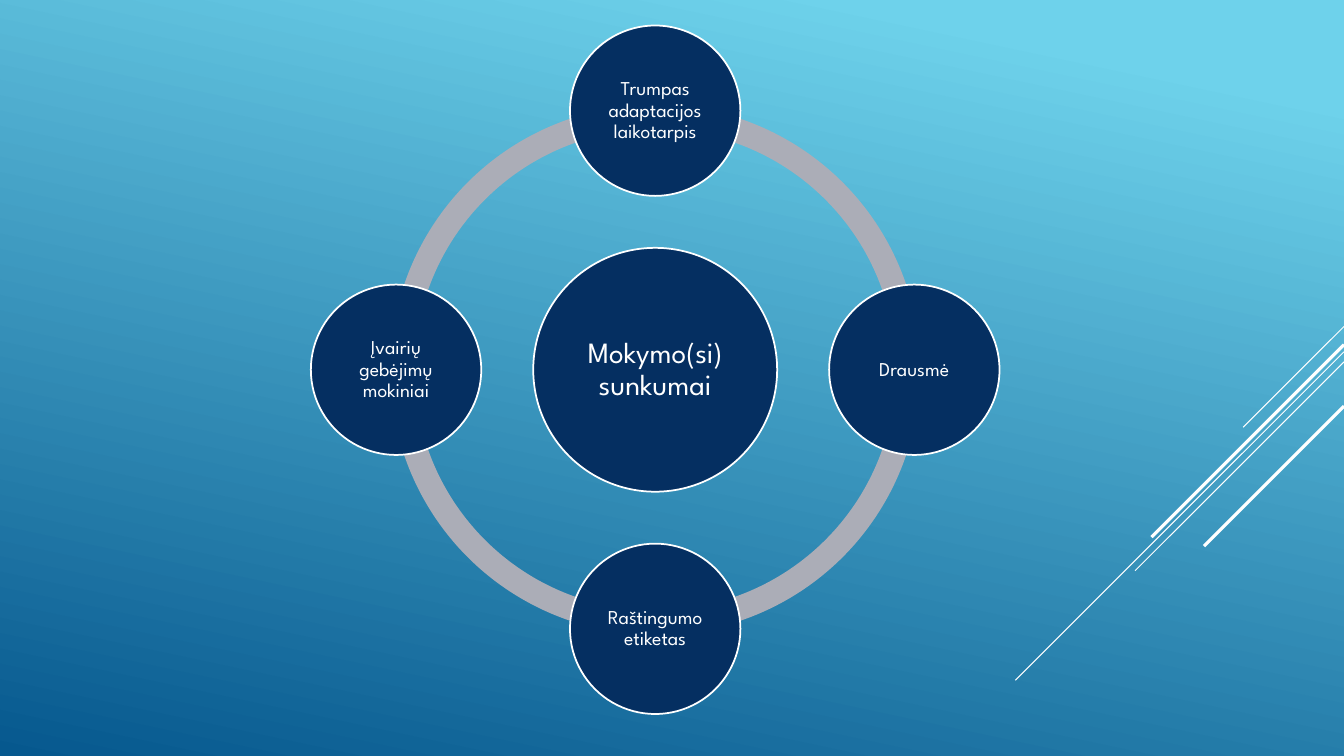
"""Build a slide showing four learning difficulties on a ring around a central topic."""
import dataclasses
import math

import lxml.etree
import pptx
import pptx.dml.color
import pptx.enum.shapes
import pptx.enum.text
import pptx.oxml.ns
import pptx.util


@dataclasses.dataclass(frozen=True)
class Theme:
    font: str = "League Spartan"
    sky: str = "6ED2EB"
    deep: str = "06588E"
    navy: str = "052F61"
    ring: str = "ABADB7"
    white: str = "FFFFFF"
    topic_size: int = 21
    difficulty_size: int = 14
    outline: float = 1.25
    thin: float = 0.75
    thick: float = 2.25


theme = Theme()
color = pptx.dml.color.RGBColor.from_string

presentation = pptx.Presentation()
presentation.slide_width = pptx.util.Inches(13.33)
presentation.slide_height = pptx.util.Inches(7.5)
slide = presentation.slides.add_slide(presentation.slide_layouts[6])
column = presentation.slide_width / 100
center_x, center_y = 48.75, 27.52
ring_size, ring_thickness = 39.45, 0.046
orbit_radius = 19.28
topic_diameter, difficulty_diameter = 18.15, 12.68


def add_round(kind, x, y, diameter, fill):
    corner = [round((value - diameter / 2) * column) for value in (x, y)]
    side = round(diameter * column)
    shape = slide.shapes.add_shape(kind, *corner, side, side)
    shape.shadow.inherit = False
    shape.fill.solid()
    shape.fill.fore_color.rgb = color(fill)
    shape.line.fill.background()
    return shape


def add_circle(text, x, y, diameter, size):
    circle = add_round(pptx.enum.shapes.MSO_SHAPE.OVAL, x, y, diameter, theme.navy)
    circle.line.color.rgb = color(theme.white)
    circle.line.width = pptx.util.Pt(theme.outline)
    frame = circle.text_frame
    frame.word_wrap = True
    frame.vertical_anchor = pptx.enum.text.MSO_ANCHOR.MIDDLE
    inset = pptx.util.Pt(size / 10)
    frame.margin_left = frame.margin_right = inset
    frame.margin_top = frame.margin_bottom = inset
    frame.text = text
    paragraph = frame.paragraphs[0]
    paragraph.alignment = pptx.enum.text.PP_ALIGN.CENTER
    paragraph.line_spacing = 0.9
    paragraph.font.name = theme.font
    paragraph.font.size = pptx.util.Pt(size)
    paragraph.font.color.rgb = color(theme.white)


background = slide.background.fill
background.gradient()
background.gradient_angle = 360 - 102
for stop, position, shade in zip(background.gradient_stops, (0.1, 1), (theme.sky, theme.deep)):
    stop.position = position
    stop.color.rgb = color(shade)

diagonals = [
    (24.3, 7.5, theme.thin),
    (26.18, 24.45, theme.thin),
    (26.93, 15.55, theme.thin),
    (25.65, 14.32, theme.thick),
    (30.23, 10.42, theme.thick),
]
for top, reach, weight in diagonals:
    ends = [round(value * column) for value in (100, top, 100 - reach, top + reach)]
    line = slide.shapes.add_connector(pptx.enum.shapes.MSO_CONNECTOR.STRAIGHT, *ends)
    line.line.color.rgb = color(theme.white)
    line.line.width = pptx.util.Pt(weight)
    properties = line._element.spPr
    lxml.etree.SubElement(properties, pptx.oxml.ns.qn("a:effectLst"))

quarter_turn = 54
for quarter in range(4):
    arc = add_round(pptx.enum.shapes.MSO_SHAPE.BLOCK_ARC, center_x, center_y, ring_size, theme.ring)
    arc.adjustments[0] = quarter * quarter_turn
    arc.adjustments[1] = (quarter + 1) % 4 * quarter_turn
    arc.adjustments[2] = ring_thickness

add_circle("Mokymo(si) sunkumai", center_x, center_y, topic_diameter, theme.topic_size)
difficulties = [
    "Trumpas adaptacijos laikotarpis",
    "Drausmė",
    "Raštingumo etiketas",
    "Įvairių gebėjimų mokiniai",
]
for index, difficulty in enumerate(difficulties):
    angle = math.tau * index / len(difficulties)
    x = center_x + orbit_radius * math.sin(angle)
    y = center_y - orbit_radius * math.cos(angle)
    add_circle(difficulty, x, y, difficulty_diameter, theme.difficulty_size)

presentation.save("out.pptx")
